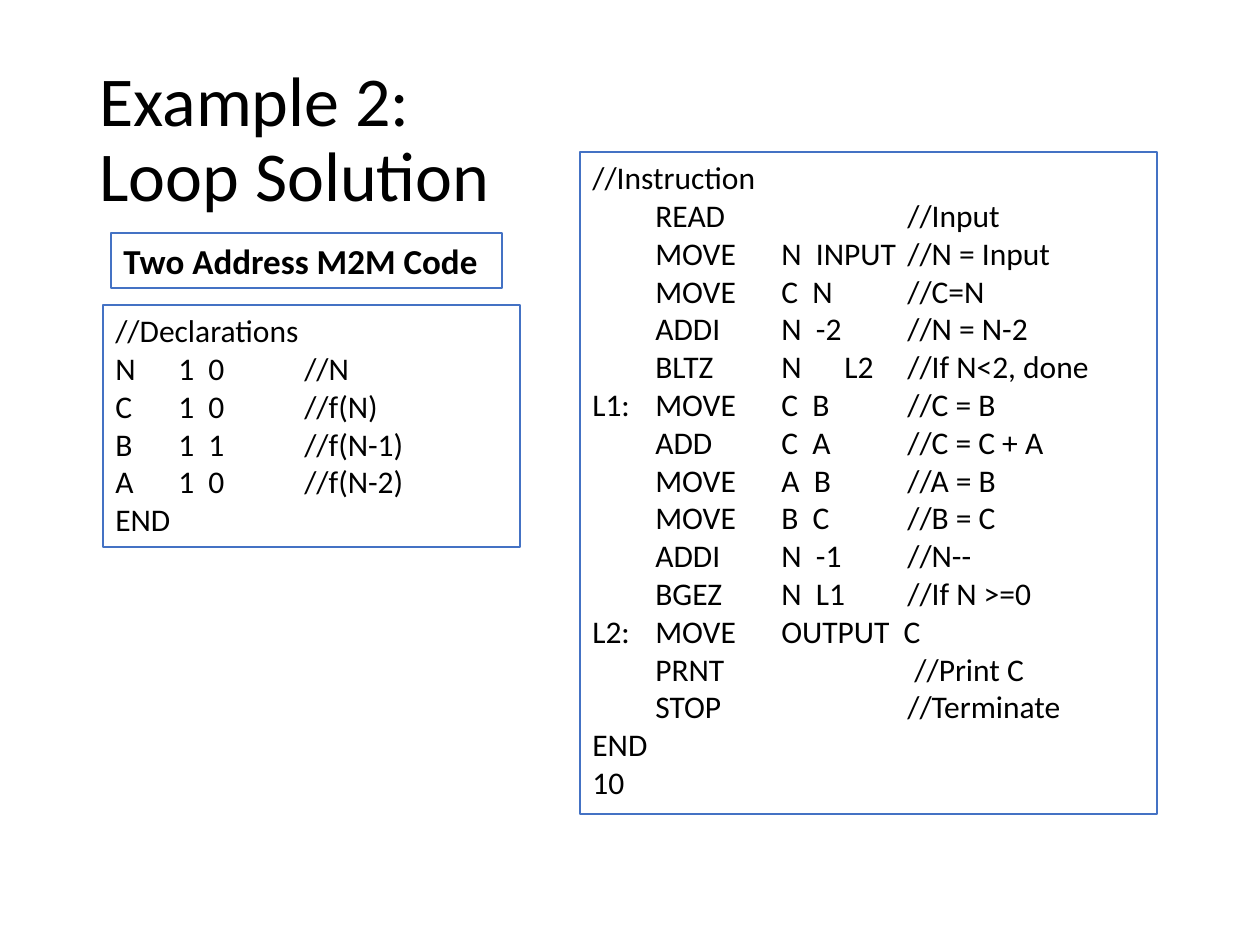
from lxml import etree
from pptx import Presentation
from pptx.dml.color import RGBColor
from pptx.enum.text import MSO_ANCHOR, MSO_AUTO_SIZE
from pptx.oxml.ns import qn
from pptx.util import Pt

EMU_PER_PX = 914400 / 126
MIDDLE = MSO_ANCHOR.MIDDLE
GROW = MSO_AUTO_SIZE.SHAPE_TO_FIT_TEXT
COLORS = {"text": "000000", "border": "4472C4"}
FONT = "Calibri"
TAB_STEP = 63
TAB_COUNT = 8

TITLE = ["Example 2: ", "Loop Solution"]
DECLARATIONS = [
    "//Declarations",
    "N \t1  0\t\t//N",
    "C \t1  0\t\t//f(N)",
    "B \t1  1\t\t//f(N-1)",
    "A\t1  0\t\t//f(N-2)",
    "END",
]
INSTRUCTIONS = [
    "//Instruction",
    "\tREAD\t\t\t//Input",
    "\tMOVE  \tN  INPUT\t//N = Input",
    "\tMOVE \tC  N\t\t//C=N",
    "\tADDI \tN  -2\t\t//N = N-2",
    "\tBLTZ \tN \tL2\t//If N<2, done",
    "L1:\tMOVE \tC  B\t\t//C = B",
    "\tADD \tC  A\t\t//C = C + A",
    "\tMOVE \tA  B\t\t//A = B",
    "\tMOVE \tB  C\t\t//B = C",
    "\tADDI \tN  -1\t\t//N--",
    "\tBGEZ \tN  L1\t//If N >=0",
    "L2:\tMOVE \tOUTPUT  C",
    "\tPRNT\t\t\t //Print C",
    "\tSTOP\t\t\t//Terminate",
    "END",
    "10",
]


def px(length):
    return round(length * EMU_PER_PX)


def color(name):
    return RGBColor.from_string(COLORS[name])


def add_run(paragraph, text, size, bold=False):
    run = paragraph.add_run()
    run.text = text
    run.font.name = FONT
    run.font.size = Pt(size)
    run.font.bold = bold
    run.font.color.rgb = color("text")


def add_tab_stops(paragraph):
    properties = paragraph._p.get_or_add_pPr()
    tab_list = etree.SubElement(properties, qn("a:tabLst"))
    for number in range(1, TAB_COUNT + 1):
        position = str(px(number * TAB_STEP))
        etree.SubElement(tab_list, qn("a:tab"), pos=position, algn="l")


def add_title(slide, box, lines):
    shape = slide.shapes.add_textbox(*map(px, box))
    frame = shape.text_frame
    frame.word_wrap = True
    frame.vertical_anchor = MIDDLE
    paragraph = frame.paragraphs[0]
    paragraph.line_spacing = 0.9
    for index, line in enumerate(lines):
        if index:
            paragraph.add_line_break()
        add_run(paragraph, line, 40)


def add_bordered_text(slide, box, lines, size, bold=False):
    shape = slide.shapes.add_textbox(*map(px, box))
    shape.line.color.rgb = color("border")
    shape.line.width = Pt(0.75)
    frame = shape.text_frame
    frame.word_wrap = True
    frame.auto_size = GROW
    for index, line in enumerate(lines):
        paragraph = frame.add_paragraph() if index else frame.paragraphs[0]
        if "\t" in line:
            add_tab_stops(paragraph)
        add_run(paragraph, line, size, bold)


def main():
    presentation = Presentation()
    presentation.slide_width = px(1260)
    presentation.slide_height = px(945)
    slide = presentation.slides.add_slide(presentation.slide_layouts[6])
    add_title(slide, (87, 50, 519, 183), TITLE)
    add_bordered_text(slide, (580, 152, 577, 662), INSTRUCTIONS, 18)
    add_bordered_text(slide, (103, 305, 417, 242), DECLARATIONS, 18)
    add_bordered_text(slide, (111, 233, 391, 55), ["Two Address M2M Code"], 20, bold=True)
    presentation.save("out.pptx")


if __name__ == "__main__":
    main()
